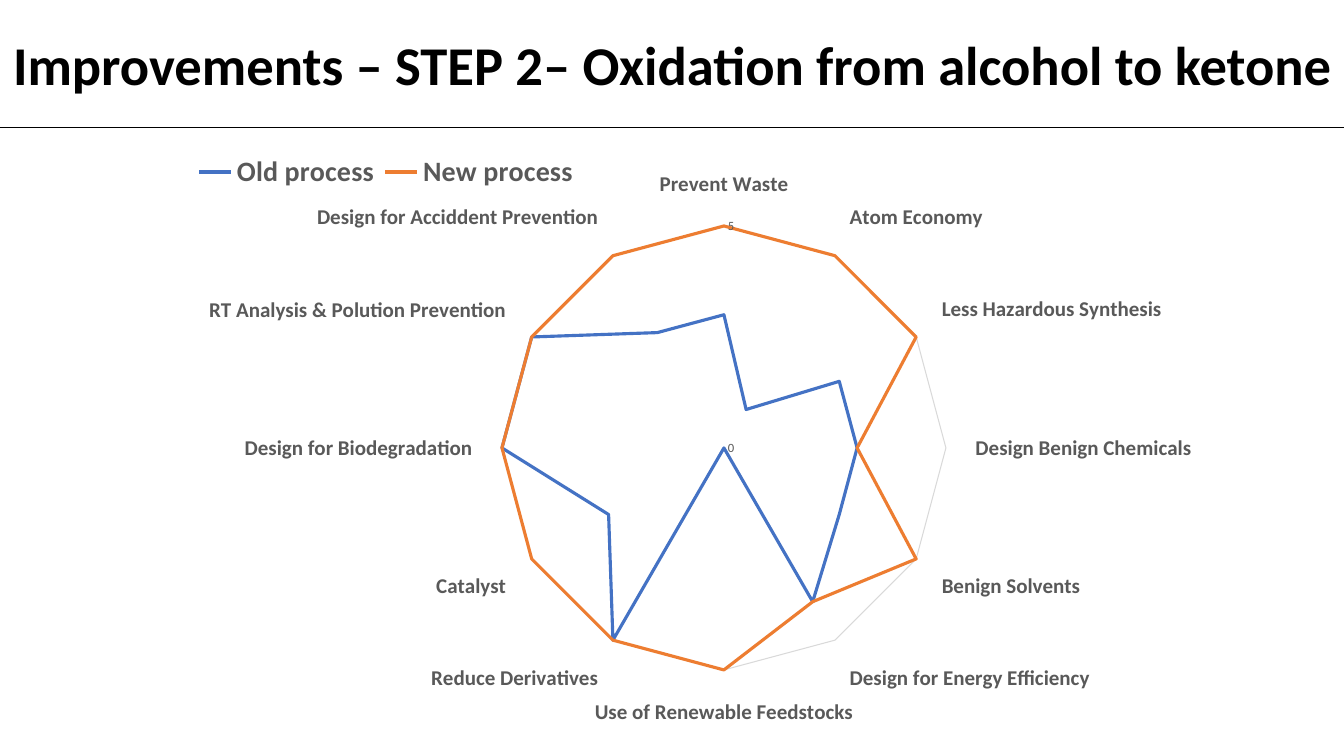
from lxml import etree
from pptx import Presentation
from pptx.chart.data import CategoryChartData
from pptx.dml.color import RGBColor
from pptx.enum.chart import XL_CHART_TYPE, XL_LEGEND_POSITION, XL_TICK_MARK
from pptx.enum.shapes import MSO_CONNECTOR
from pptx.enum.text import MSO_AUTO_SIZE, PP_ALIGN
from pptx.oxml.ns import qn
from pptx.util import Emu, Pt

RADAR = XL_CHART_TYPE.RADAR
LEGEND_TOP = XL_LEGEND_POSITION.TOP
NO_TICK = XL_TICK_MARK.NONE
STRAIGHT = MSO_CONNECTOR.STRAIGHT
GROW = MSO_AUTO_SIZE.SHAPE_TO_FIT_TEXT
CENTER = PP_ALIGN.CENTER

# Content
TITLE = "Improvements – STEP 2– Oxidation from alcohol to ketone"
SCORES = [  # principle, old process, new process
    ("Prevent Waste", 3, 5),
    ("Atom Economy", 1, 5),
    ("Less Hazardous Synthesis", 3, 5),
    ("Design Benign Chemicals", 3, 3),
    ("Benign Solvents", 3, 5),
    ("Design for Energy Efficiency", 4, 4),
    ("Use of Renewable Feedstocks", 0, 5),
    ("Reduce Derivatives", 5, 5),
    ("Catalyst", 3, 5),
    ("Design for Biodegradation", 5, 5),
    ("RT Analysis & Polution Prevention", 5, 5),
    ("Design for Acciddent Prevention", 3, 5),
]
PROCESSES = [("Old process", "4472C4"), ("New process", "ED7D31")]
FONT, BLACK, GRAY, GRID = "Calibri", "000000", "595959", "D9D9D9"

# Geometry in px: left, top, width, height
SLIDE_W, SLIDE_H = 1344, 756
TITLE_BOX = (-21, 26, 1387, 78)
RULE_Y = 127
CHART_BOX = (180, 87, 1042, 669)
PLOT_BOX = (502, 226, 444, 444)
LEGEND_BOX = (188, 153, 396, 38)


def px(n):
    return Emu(round(n * 914400 / 100.8))


def rgb(color):
    return RGBColor.from_string(color)


def style_font(font, size, color, bold=False):
    font.name, font.size, font.bold = FONT, Pt(size), bold
    font.color.rgb = rgb(color)


def style_line(line, color, width):
    line.color.rgb = rgb(color)
    line.width = Pt(width)


def add_text(slide, box, text, size, color, bold=False, align=CENTER):
    tf = slide.shapes.add_textbox(*map(px, box)).text_frame
    tf.word_wrap = False
    tf.auto_size = GROW
    p = tf.paragraphs[0]
    p.alignment = align
    r = p.add_run()
    r.text = text
    style_font(r.font, size, color, bold)


def chart_layout(box, inner=False):
    """Manual layout of a chart part, as fractions of the chart box."""
    layout = etree.Element(qn("c:layout"))
    manual = etree.SubElement(layout, qn("c:manualLayout"))
    left, top, w, h = CHART_BOX
    fractions = ((box[0] - left) / w, (box[1] - top) / h, box[2] / w, box[3] / h)
    settings = [("layoutTarget", "inner")] if inner else []
    settings += [("xMode", "edge"), ("yMode", "edge")]
    settings += [(k, f"{v:.4f}") for k, v in zip("xywh", fractions)]
    for tag, value in settings:
        etree.SubElement(manual, qn("c:" + tag)).set("val", value)
    return layout


def add_radar(slide):
    data = CategoryChartData()
    data.categories = [row[0] for row in SCORES]
    for i, (name, _) in enumerate(PROCESSES, start=1):
        data.add_series(name, [row[i] for row in SCORES])
    chart = slide.shapes.add_chart(RADAR, *map(px, CHART_BOX), data).chart
    chart.has_title = False
    style_font(chart.font, 10, BLACK)

    # Series
    plot = chart.plots[0]
    plot.vary_by_categories = False
    for series, (_, color) in zip(plot.series, PROCESSES):
        series.smooth = False
        style_line(series.format.line, color, 2.25)

    # Axes
    cat, val = chart.category_axis, chart.value_axis
    for axis, size, bold in ((cat, 15, True), (val, 9, False)):
        axis.major_tick_mark = axis.minor_tick_mark = NO_TICK
        style_font(axis.tick_labels.font, size, GRAY, bold)
    cat.has_major_gridlines = False
    style_line(cat.format.line, GRID, 0.75)
    val.minimum_scale, val.maximum_scale, val.major_unit = 0, 5, 5
    val.has_major_gridlines = True
    style_line(val.major_gridlines.format.line, GRID, 0.75)
    val.format.line.fill.background()

    # Legend
    chart.has_legend = True
    legend = chart.legend
    legend.position = LEGEND_TOP
    legend.include_in_layout = False
    style_font(legend.font, 20, GRAY, True)

    # Places of plot and legend
    area = chart.element.find(".//" + qn("c:plotArea"))
    for old in area.findall(qn("c:layout")):
        area.remove(old)
    area.insert(0, chart_layout(PLOT_BOX, inner=True))
    key = chart.element.find(".//" + qn("c:legend"))
    for old in key.findall(qn("c:layout")):
        key.remove(old)
    key.find(qn("c:legendPos")).addnext(chart_layout(LEGEND_BOX))


def add_rule(slide):
    rule = slide.shapes.add_connector(STRAIGHT, 0, px(RULE_Y), px(SLIDE_W), px(RULE_Y))
    style_line(rule.line, BLACK, 0.5)
    etree.SubElement(rule.element.spPr, qn("a:effectLst"))


def main():
    prs = Presentation()
    prs.slide_width, prs.slide_height = px(SLIDE_W), px(SLIDE_H)
    slide = prs.slides.add_slide(prs.slide_layouts[6])
    add_radar(slide)
    add_rule(slide)
    add_text(slide, TITLE_BOX, TITLE, size=39, color=BLACK, bold=True)
    prs.save("out.pptx")


if __name__ == "__main__":
    main()
